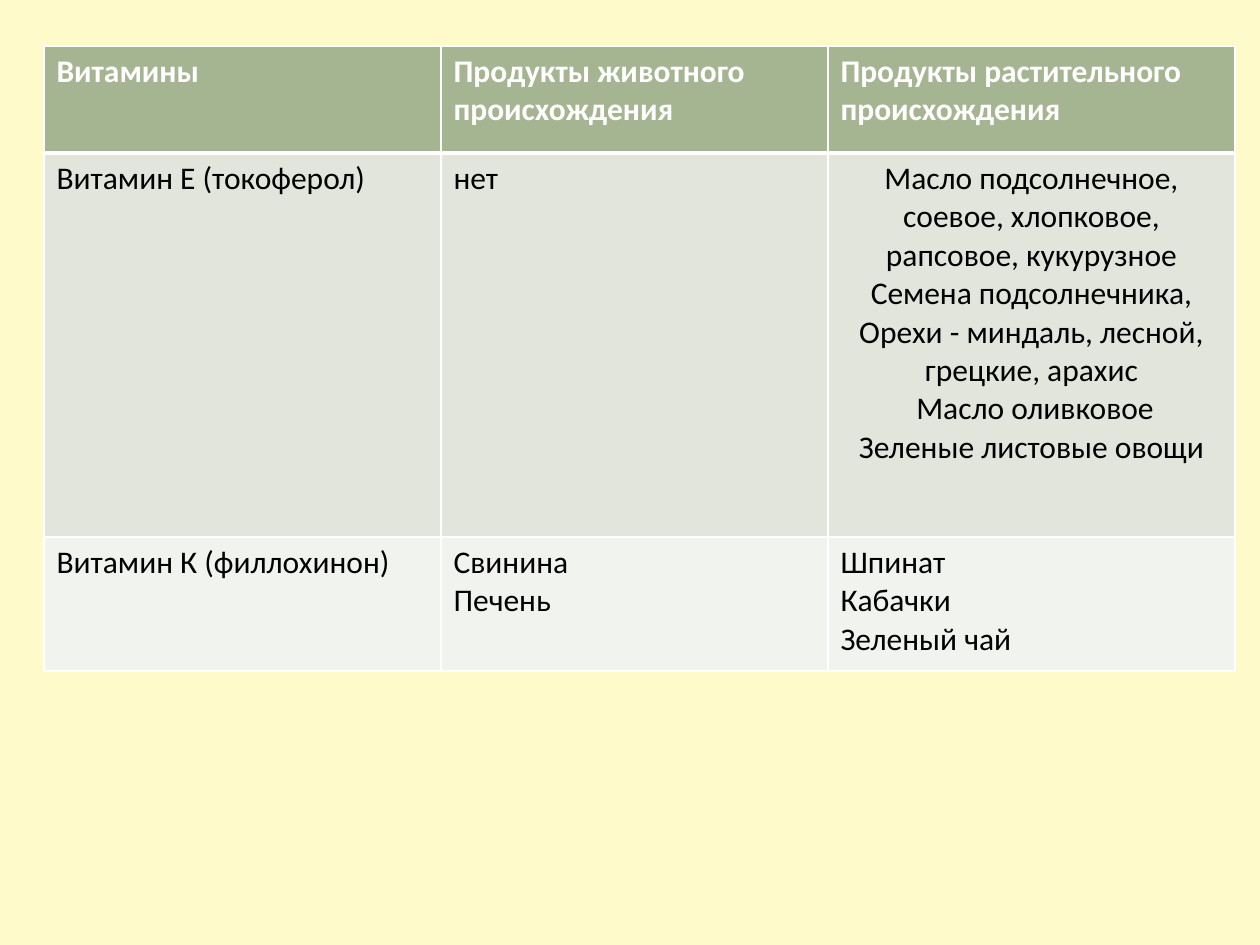
from lxml import etree
from pptx import Presentation
from pptx.dml.color import RGBColor
from pptx.enum.text import PP_ALIGN
from pptx.oxml.ns import qn
from pptx.util import Emu, Pt

PX_PER_INCH = 126
EMU_PER_INCH = 914400
LEFT, CENTER = PP_ALIGN.LEFT, PP_ALIGN.CENTER
BLANK_LAYOUT = 6

BACKGROUND = "FEFAC9"
WHITE, BLACK = "FFFFFF", "000000"
ROW_FILLS = ["A5B592", "E1E5DC", "F0F3EE"]
COLUMN_WIDTHS = [397, 387, 407]
ROW_HEIGHTS = [107, 384, 134]

# Each cell is a list of paragraphs.
VITAMIN_ROWS = [
    [["Витамины"],
     ["Продукты животного происхождения"],
     ["Продукты растительного происхождения"]],
    [["Витамин Е (токоферол)"],
     ["нет"],
     ["Масло подсолнечное, соевое, хлопковое, рапсовое, кукурузное "
      "Семена подсолнечника, Орехи - миндаль, лесной, грецкие, арахис",
      " Масло оливковое",
      "Зеленые листовые овощи"]],
    [["Витамин К (филлохинон)"],
     ["Свинина", "Печень"],
     ["Шпинат", "Кабачки", "Зеленый чай"]],
]


def px(value):
    return Emu(round(value * EMU_PER_INCH / PX_PER_INCH))


def color(hex_string):
    return RGBColor.from_string(hex_string)


def set_borders(cell, widths):
    """Draw white borders; widths maps the sides L, R, T, B to points."""
    properties = cell._tc.get_or_add_tcPr()
    for index, side in enumerate("LRTB"):
        line = etree.Element(qn(f"a:ln{side}"), w=str(Pt(widths[side])))
        fill = etree.SubElement(line, qn("a:solidFill"))
        etree.SubElement(fill, qn("a:srgbClr"), val=WHITE)
        properties.insert(index, line)


def fill_cell(cell, paragraphs, text_color, bold, alignment):
    frame = cell.text_frame
    for index, text in enumerate(paragraphs):
        paragraph = frame.add_paragraph() if index else frame.paragraphs[0]
        paragraph.alignment = alignment
        run = paragraph.add_run()
        run.text = text
        run.font.name = "Calibri"
        run.font.size = Pt(18)
        run.font.bold = bold
        run.font.color.rgb = color(text_color)


def add_vitamin_table(slide, left, top):
    shape = slide.shapes.add_table(
        len(ROW_HEIGHTS), len(COLUMN_WIDTHS), px(left), px(top),
        px(sum(COLUMN_WIDTHS)), px(sum(ROW_HEIGHTS)))
    table = shape.table
    for column, width in zip(table.columns, COLUMN_WIDTHS):
        column.width = px(width)
    for row, height in zip(table.rows, ROW_HEIGHTS):
        row.height = px(height)

    for row_index, row_texts in enumerate(VITAMIN_ROWS):
        header = row_index == 0
        for column_index, paragraphs in enumerate(row_texts):
            cell = table.cell(row_index, column_index)
            cell.fill.solid()
            cell.fill.fore_color.rgb = color(ROW_FILLS[row_index])
            set_borders(cell, {"L": 1, "R": 1,
                               "T": 3 if row_index == 1 else 1,
                               "B": 3 if header else 1})
            alignment = CENTER if (row_index, column_index) == (1, 2) else LEFT
            fill_cell(cell, paragraphs, WHITE if header else BLACK,
                      header, alignment)


def main():
    presentation = Presentation()
    presentation.slide_width = px(1260)
    presentation.slide_height = px(945)
    slide = presentation.slides.add_slide(
        presentation.slide_layouts[BLANK_LAYOUT])
    slide.background.fill.solid()
    slide.background.fill.fore_color.rgb = color(BACKGROUND)
    add_vitamin_table(slide, 44, 46)
    presentation.save("out.pptx")


if __name__ == "__main__":
    main()
